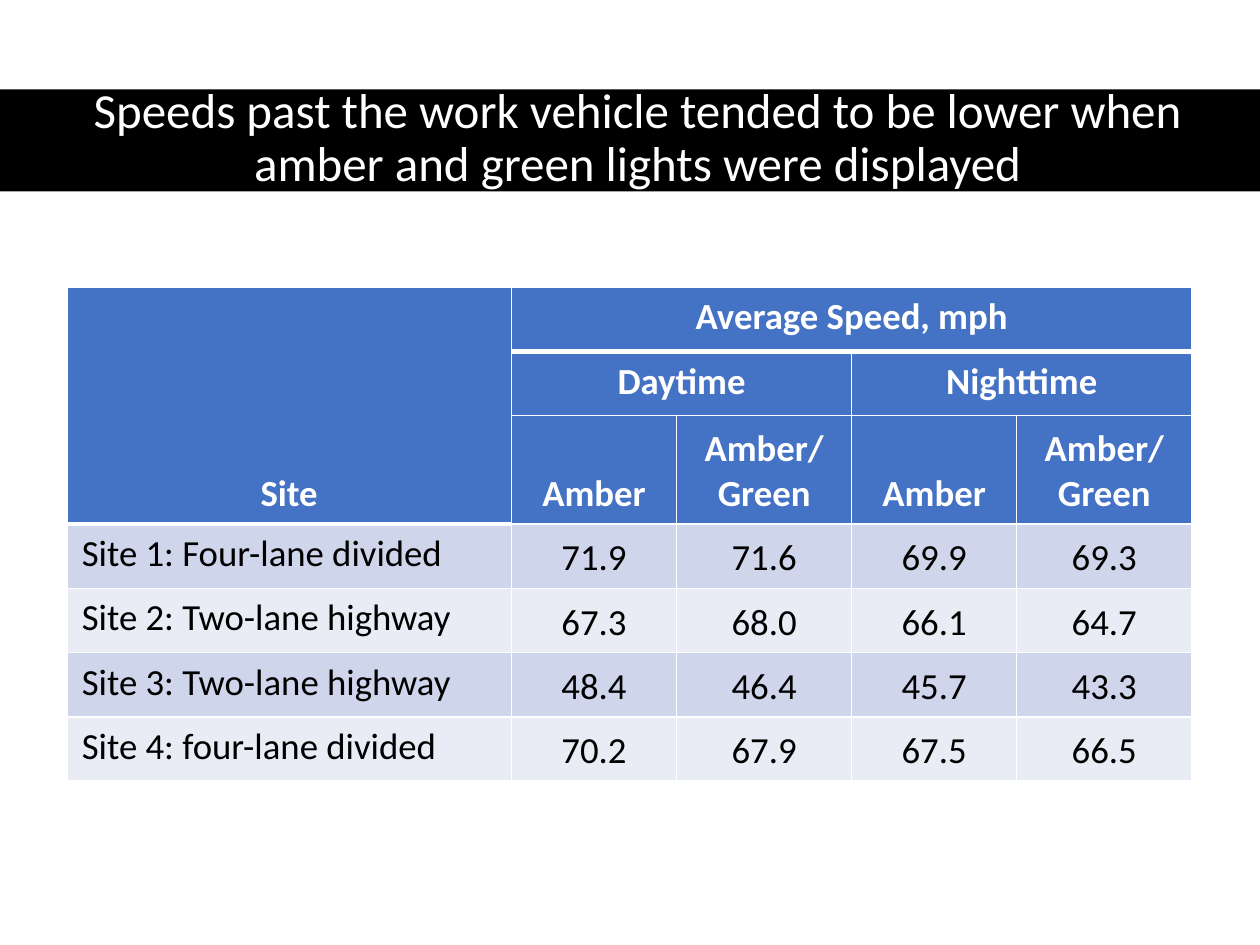
from lxml import etree
from pptx import Presentation
from pptx.dml.color import RGBColor
from pptx.enum.shapes import MSO_SHAPE
from pptx.enum.text import MSO_ANCHOR, PP_ALIGN
from pptx.oxml.ns import qn
from pptx.util import Inches, Pt

RECTANGLE = MSO_SHAPE.RECTANGLE
TOP, MIDDLE, BOTTOM = MSO_ANCHOR.TOP, MSO_ANCHOR.MIDDLE, MSO_ANCHOR.BOTTOM
LEFT, CENTER = PP_ALIGN.LEFT, PP_ALIGN.CENTER

BLACK = RGBColor(0x00, 0x00, 0x00)
WHITE = RGBColor(0xFF, 0xFF, 0xFF)
HEADER_BLUE = RGBColor(0x44, 0x72, 0xC4)
BANDS = [RGBColor(0xCF, 0xD5, 0xEA), RGBColor(0xE9, 0xEB, 0xF5)]

FONT = "Calibri"
HEADER_ROWS = 3
COLUMN_WIDTHS = [3.53, 1.31, 1.39, 1.31, 1.39]
ROW_HEIGHTS = [0.51, 0.51, 0.86, 0.51, 0.51, 0.51, 0.51]
ROWS = [
    ["Site", "Average Speed, mph", "", "", ""],
    ["", "Daytime", "", "Nighttime", ""],
    ["", "Amber", "Amber/ Green", "Amber", "Amber/ Green"],
    ["Site 1: Four-lane divided", "71.9", "71.6", "69.9", "69.3"],
    ["Site 2: Two-lane highway", "67.3", "68.0", "66.1", "64.7"],
    ["Site 3: Two-lane highway", "48.4", "46.4", "45.7", "43.3"],
    ["Site 4: four-lane divided", "70.2", "67.9", "67.5", "66.5"],
]
# First and last (row, column) of each merged header
MERGES = [((0, 0), (2, 0)), ((0, 1), (0, 4)), ((1, 1), (1, 2)), ((1, 3), (1, 4))]


def style_paragraph(paragraph, size, color, alignment, bold=False):
    paragraph.alignment = alignment
    paragraph.font.name = FONT
    paragraph.font.size = Pt(size)
    paragraph.font.bold = bold
    paragraph.font.color.rgb = color


def add_border(cell, side, points):
    """Add a white line on one side (L, R, T or B); call before filling the cell."""
    properties = cell._tc.get_or_add_tcPr()
    line = etree.SubElement(properties, qn(f"a:ln{side}"), w=str(Pt(points)))
    fill = etree.SubElement(line, qn("a:solidFill"))
    etree.SubElement(fill, qn("a:srgbClr"), val=str(WHITE))


presentation = Presentation()
presentation.slide_width = Inches(10)
presentation.slide_height = Inches(7.5)
slide = presentation.slides.add_slide(presentation.slide_layouts[6])

# Title band
band = slide.shapes.add_shape(
    RECTANGLE, 0, Inches(0.71), presentation.slide_width, Inches(0.81))
band.shadow.inherit = False
band.fill.solid()
band.fill.fore_color.rgb = BLACK
band.line.fill.background()

title = slide.shapes.add_textbox(Inches(0.46), Inches(0.7), Inches(9.2), Inches(0.81))
title.text_frame.word_wrap = True
title.text_frame.vertical_anchor = MIDDLE
paragraph = title.text_frame.paragraphs[0]
paragraph.text = ("Speeds past the work vehicle tended to be lower when "
                  "amber and green lights were displayed")
paragraph.line_spacing = 0.9
style_paragraph(paragraph, 28, WHITE, CENTER)

# Speed table
table = slide.shapes.add_table(
    len(ROWS), len(COLUMN_WIDTHS), Inches(0.53), Inches(2.28),
    Inches(sum(COLUMN_WIDTHS)), Inches(sum(ROW_HEIGHTS))).table
for column, width in zip(table.columns, COLUMN_WIDTHS):
    column.width = Inches(width)
for row, height in zip(table.rows, ROW_HEIGHTS):
    row.height = Inches(height)
for first, last in MERGES:
    table.cell(*first).merge(table.cell(*last))

for row_index, texts in enumerate(ROWS):
    is_header = row_index < HEADER_ROWS
    for column_index, text in enumerate(texts):
        cell = table.cell(row_index, column_index)
        # A thick rule lies under the top header and under the merged site header
        thick_row = HEADER_ROWS if column_index == 0 else 1
        add_border(cell, "L", 1)
        add_border(cell, "R", 1)
        add_border(cell, "T", 3 if row_index == thick_row else 1)
        add_border(cell, "B", 3 if row_index < thick_row else 1)
        cell.fill.solid()
        cell.fill.fore_color.rgb = (
            HEADER_BLUE if is_header else BANDS[(row_index - HEADER_ROWS) % 2])
        cell.margin_left = cell.margin_right = Inches(0.12)
        cell.margin_top = cell.margin_bottom = Inches(0.06)

        is_site_name = column_index == 0 and not is_header
        is_upper_header = column_index > 0 and row_index < HEADER_ROWS - 1
        cell.vertical_anchor = TOP if is_site_name or is_upper_header else BOTTOM
        if text:
            cell.text = text
            style_paragraph(
                cell.text_frame.paragraphs[0], 21, WHITE if is_header else BLACK,
                LEFT if is_site_name else CENTER, bold=is_header)

presentation.save("out.pptx")
